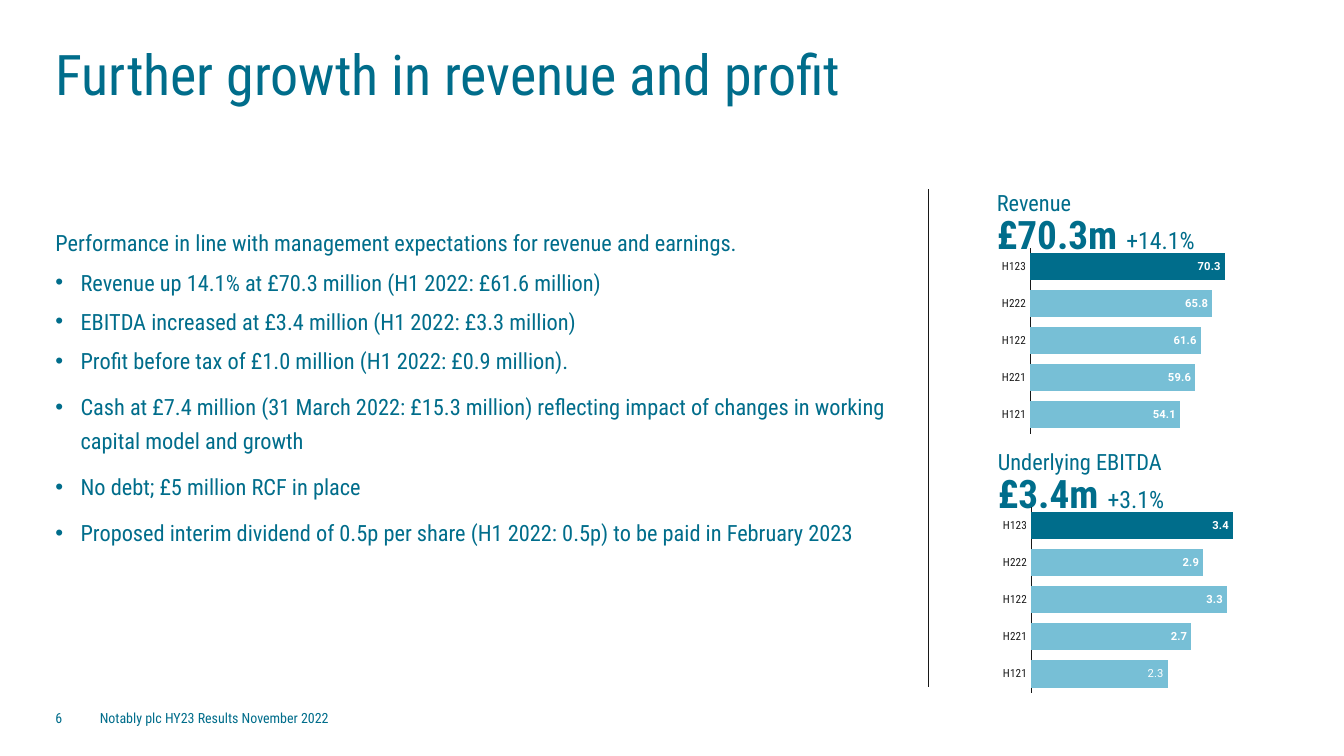
"""Build the half-year revenue and profit slide with its two bar charts."""
from dataclasses import dataclass

import lxml.etree
import pptx
import pptx.chart.data
import pptx.dml.color
import pptx.enum.chart
import pptx.enum.shapes
import pptx.enum.text
import pptx.oxml.ns
import pptx.util

COLORS = {"teal": "006D8B", "sky": "77BFD6", "ink": "181818", "white": "FFFFFF"}
CONDENSED = "Roboto Condensed"
CELL = pptx.util.Inches(0.1)
SLIDE_COLUMNS, SLIDE_ROWS = 133.33, 75
MARGIN = 5.5
METRIC_WIDTH = 29
CHART_WIDTH, CHART_HEIGHT = 24.4, 19.2
PERIODS = ["H121", "H221", "H122", "H222", "H123"]
PLOT_SHARES = {"x": 0.135, "y": 0.015, "w": 0.845, "h": 0.96}


@dataclass
class Run:
    text: str
    size: float
    bold: bool = False


@dataclass
class Line:
    runs: list[Run]
    spacing: float | None = None
    after: float = 0
    bulleted: bool = False


@dataclass
class Metric:
    name: str
    amount: str
    growth: str
    values: list[float]
    maximum: float
    column: float
    row: float
    plain_points: tuple[int, ...] = ()


METRICS = [
    Metric("Revenue", "£70.3m ", "+14.1%", [54.1, 59.6, 61.6, 65.8, 70.3], 75, 98.9, 18.9),
    Metric("Underlying EBITDA", "£3.4m ", "+3.1%", [2.3, 2.7, 3.3, 2.9, 3.4], 3.5, 99, 44.6, (0,)),
]

INTRODUCTION = "Performance in line with management expectations for revenue and earnings."
HIGHLIGHTS = [
    ("Revenue up 14.1% at £70.3 million (H1 2022: £61.6 million)", 19),
    ("EBITDA increased at £3.4 million (H1 2022: £3.3 million)", 19),
    ("Profit before tax of £1.0 million (H1 2022: £0.9 million).", 19),
    ("Cash at £7.4 million (31 March 2022: £15.3 million) reflecting impact of changes in "
     "working capital model and growth", 24),
    ("No debt; £5 million RCF in place", 24),
    ("Proposed interim dividend of 0.5p per share (H1 2022: 0.5p) to be paid in February 2023", 24),
]


def grid(cells: float) -> int:
    return round(cells * CELL)


def color(name: str) -> pptx.dml.color.RGBColor:
    return pptx.dml.color.RGBColor.from_string(COLORS[name])


def set_font(font, size: float, shade: str, bold: bool = False, face: str = CONDENSED) -> None:
    font.size = pptx.util.Pt(size)
    font.name = face
    font.bold = bold
    font.color.rgb = color(shade)


def add_bullet(paragraph) -> None:
    properties = paragraph._p.get_or_add_pPr()
    properties.set("marL", str(grid(2.5)))
    properties.set("indent", str(-grid(2.5)))
    tag = pptx.oxml.ns.qn
    shade = lxml.etree.SubElement(properties, tag("a:buClr"))
    lxml.etree.SubElement(shade, tag("a:srgbClr"), val=COLORS["teal"])
    lxml.etree.SubElement(properties, tag("a:buFont"), typeface="Arial")
    lxml.etree.SubElement(properties, tag("a:buChar"), char="•")


def write(frame, lines: list[Line], middle: bool = False) -> None:
    anchor = pptx.enum.text.MSO_ANCHOR
    frame.margin_left = frame.margin_right = frame.margin_top = frame.margin_bottom = 0
    frame.word_wrap = True
    frame.auto_size = pptx.enum.text.MSO_AUTO_SIZE.NONE
    frame.vertical_anchor = anchor.MIDDLE if middle else anchor.TOP
    for index, line in enumerate(lines):
        paragraph = frame.add_paragraph() if index else frame.paragraphs[0]
        paragraph.alignment = pptx.enum.text.PP_ALIGN.LEFT
        paragraph.space_after = pptx.util.Pt(line.after)
        if line.spacing:
            exact = line.spacing > 3
            paragraph.line_spacing = pptx.util.Pt(line.spacing) if exact else line.spacing
        if line.bulleted:
            add_bullet(paragraph)
        for part in line.runs:
            run = paragraph.add_run()
            run.text = part.text
            set_font(run.font, part.size, "teal", part.bold)


def add_text(slide, column: float, row: float, width: float, height: float,
             lines: list[Line], middle: bool = False) -> None:
    box = slide.shapes.add_textbox(grid(column), grid(row), grid(width), grid(height))
    write(box.text_frame, lines, middle)


def fix_plot_area(chart) -> None:
    tag = pptx.oxml.ns.qn
    plot_area = chart._chartSpace.chart.plotArea
    for layout in plot_area.findall(tag("c:layout")):
        plot_area.remove(layout)
    layout = lxml.etree.Element(tag("c:layout"))
    plot_area.insert(0, layout)
    manual = lxml.etree.SubElement(layout, tag("c:manualLayout"))
    lxml.etree.SubElement(manual, tag("c:layoutTarget"), val="inner")
    for side in "xy":
        lxml.etree.SubElement(manual, tag(f"c:{side}Mode"), val="edge")
    for side, share in PLOT_SHARES.items():
        lxml.etree.SubElement(manual, tag(f"c:{side}"), val=str(share))


def add_bars(slide, metric: Metric) -> None:
    kinds = pptx.enum.chart
    data = pptx.chart.data.CategoryChartData(number_format="0.0")
    data.categories = PERIODS
    data.add_series(metric.name, metric.values)
    chart = slide.shapes.add_chart(
        kinds.XL_CHART_TYPE.BAR_CLUSTERED, grid(metric.column), grid(metric.row + 5.4),
        grid(CHART_WIDTH), grid(CHART_HEIGHT), data).chart
    set_font(chart.font, 10, "ink")
    chart.has_legend = chart.has_title = False
    fix_plot_area(chart)

    periods = chart.category_axis
    periods.major_tick_mark = periods.minor_tick_mark = kinds.XL_TICK_MARK.NONE
    periods.has_major_gridlines = False
    periods.format.line.color.rgb = color("ink")
    periods.format.line.width = pptx.util.Pt(0.75)
    set_font(periods.tick_labels.font, 8, "ink")
    amounts = chart.value_axis
    amounts.minimum_scale, amounts.maximum_scale = 0, metric.maximum
    amounts.has_major_gridlines = amounts.visible = False

    plot = chart.plots[0]
    plot.gap_width = 37
    plot.vary_by_categories = False
    bars = plot.series[0]
    bars.invert_if_negative = False
    for fill, shade in ((bars.format.fill, "sky"),
                        (bars.points[len(PERIODS) - 1].format.fill, "teal")):
        fill.solid()
        fill.fore_color.rgb = color(shade)
    labels = bars.data_labels
    labels.show_value = True
    labels.number_format, labels.number_format_is_linked = "0.0", False
    labels.position = kinds.XL_LABEL_POSITION.INSIDE_END
    set_font(labels.font, 8, "white", True, "Roboto")
    for index in metric.plain_points:
        label = bars.points[index].data_label
        run = label.text_frame.paragraphs[0].add_run()
        run.text = str(metric.values[index])
        set_font(run.font, 8, "white", face="Roboto")
        label.position = kinds.XL_LABEL_POSITION.INSIDE_END


def add_metric(slide, metric: Metric) -> None:
    add_text(slide, metric.column, metric.row, METRIC_WIDTH, 2.5,
             [Line([Run(metric.name, 16)], 18)])
    add_text(slide, metric.column, metric.row + 3, METRIC_WIDTH, 3.7,
             [Line([Run(metric.amount, 28, True), Run(metric.growth, 17)], 26)])
    add_bars(slide, metric)


def add_divider(slide) -> None:
    divider = slide.shapes.add_connector(
        pptx.enum.shapes.MSO_CONNECTOR.STRAIGHT, grid(92.1), grid(18.8), grid(92.1), grid(68.2))
    divider.line.color.rgb = color("ink")
    divider.line.width = pptx.util.Pt(0.5)
    lxml.etree.SubElement(divider._element.spPr, pptx.oxml.ns.qn("a:effectLst"))


def main() -> None:
    deck = pptx.Presentation()
    deck.slide_width, deck.slide_height = grid(SLIDE_COLUMNS), grid(SLIDE_ROWS)
    slide = deck.slides.add_slide(deck.slide_layouts[5])
    title = slide.shapes.title
    title.left, title.top, title.width, title.height = map(grid, (MARGIN, 4.7, 115, 6.1))
    write(title.text_frame, [Line([Run("Further growth in revenue and profit", 40)], 0.9)])
    highlights = [Line([Run(text, 16)], spacing, 9, True) for text, spacing in HIGHLIGHTS]
    add_text(slide, MARGIN, 22.8, 86.6, 45,
             [Line([Run(INTRODUCTION, 16)], 19, 9), *highlights])
    for metric in METRICS:
        add_metric(slide, metric)
    add_divider(slide)
    add_text(slide, MARGIN, 70.4, 3.7, 1.7, [Line([Run("6", 10)])], True)
    add_text(slide, 9.9, 70.4, 36.9, 1.7,
             [Line([Run("Notably plc HY23 Results November 2022", 10)])], True)
    deck.save("out.pptx")


if __name__ == "__main__":
    main()
